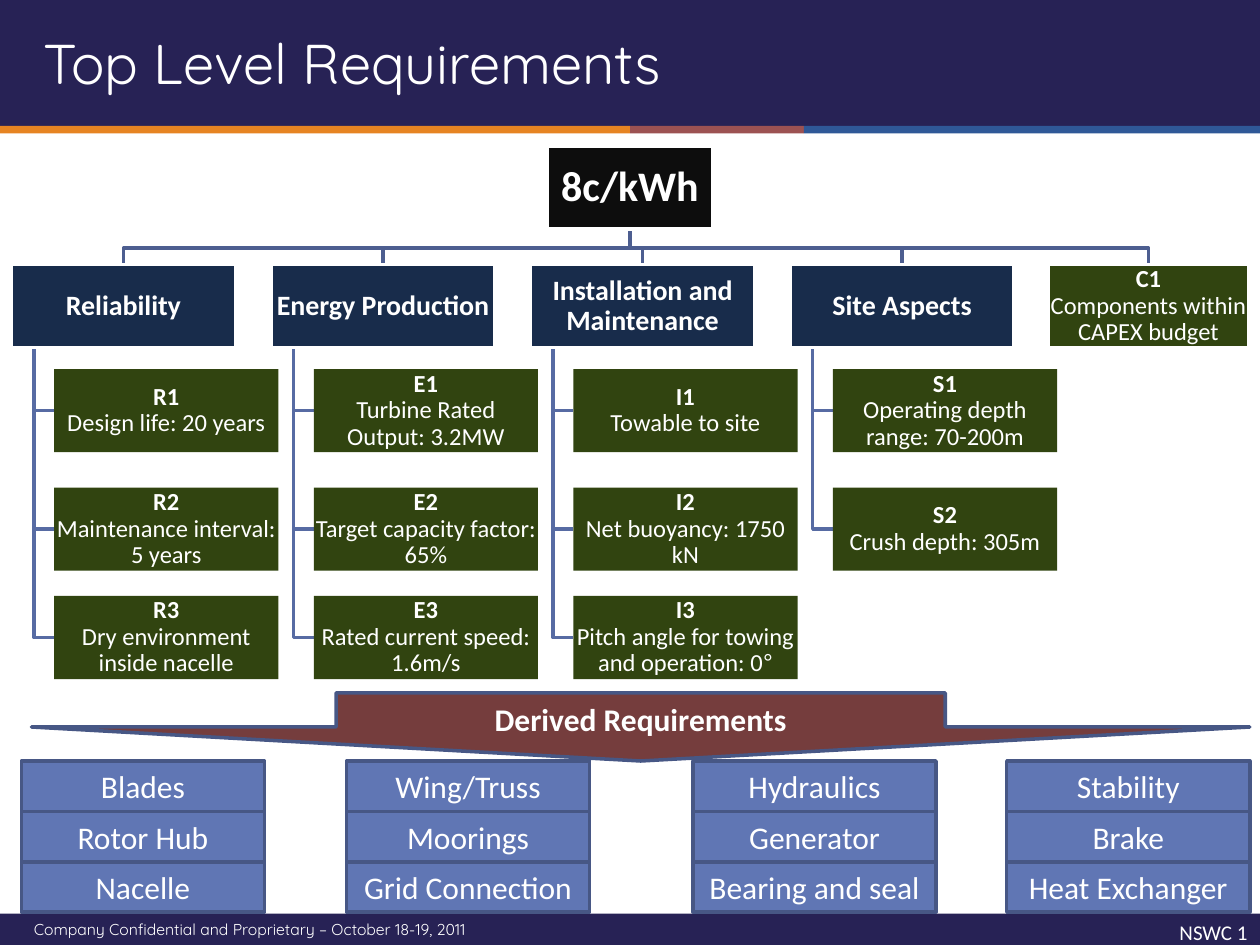
"""Build the Top Level Requirements slide."""
import pptx
import pptx.util
import pptx.dml.color
import pptx.enum.shapes
import pptx.enum.text

Inches = pptx.util.Inches
Pt = pptx.util.Pt
RGB = pptx.dml.color.RGBColor
SHAPE = pptx.enum.shapes.MSO_SHAPE
ALIGN = pptx.enum.text.PP_ALIGN
ANCHOR = pptx.enum.text.MSO_ANCHOR

WHITE = RGB(0xFF, 0xFF, 0xFF)
BLACK = RGB(0x0D, 0x0D, 0x0D)
INDIGO = RGB(0x27, 0x22, 0x55)
ORANGE = RGB(0xE6, 0x84, 0x22)
RED = RGB(0x9C, 0x52, 0x52)
BLUE = RGB(0x2F, 0x58, 0x97)
NAVY = RGB(0x18, 0x2C, 0x4B)
GREEN = RGB(0x31, 0x44, 0x10)
MAROON = RGB(0x75, 0x3D, 0x3D)
PERI = RGB(0x60, 0x76, 0xB4)
EDGE = RGB(0x47, 0x57, 0x85)
TRUNK = RGB(0x4D, 0x5E, 0x90)
TWIG = RGB(0x57, 0x6B, 0xA3)

TITLE = "Top Level Requirements"
FOOTER = "Company Confidential and Proprietary – October 18-19, 2011"
PAGE = "NSWC 1"
GOAL = "8c/kWh"
BUDGET = ("C1", "Components within CAPEX budget")
BRANCHES = [
    ("Reliability", [
        ("R1", "Design life: 20 years"),
        ("R2", "Maintenance interval: 5 years"),
        ("R3", "Dry environment inside nacelle")]),
    ("Energy Production", [
        ("E1", "Turbine Rated Output: 3.2MW"),
        ("E2", "Target capacity factor: 65%"),
        ("E3", "Rated current speed: 1.6m/s")]),
    ("Installation and Maintenance", [
        ("I1", "Towable to site"),
        ("I2", "Net buoyancy: 1750 kN"),
        ("I3", "Pitch angle for towing and operation: 0°")]),
    ("Site Aspects", [
        ("S1", "Operating depth range: 70-200m"),
        ("S2", "Crush depth: 305m")]),
]
DERIVED = "Derived Requirements"
PARTS = [
    (0.17, ["Blades", "Rotor Hub", "Nacelle"]),
    (2.75, ["Wing/Truss", "Moorings", "Grid Connection"]),
    (5.5, ["Hydraulics", "Generator", "Bearing and seal"]),
    (7.99, ["Stability", "Brake", "Heat Exchanger"]),
]
STRIPES = [(0, 5, ORANGE), (5, 1.38, RED), (6.38, 3.62, BLUE)]

LEFT, PITCH, WIDE, HIGH = 0.09, 2.06, 1.78, 0.66
HEAD, ROWS = 2.1, (2.93, 3.87, 4.73)
MID, FORK = 5, 1.97

deck = pptx.Presentation()
deck.slide_width, deck.slide_height = Inches(10), Inches(7.5)
slide = deck.slides.add_slide(deck.slide_layouts[6])


def write(shape, lines, size, font="Calibri", align=ALIGN.CENTER, space=None,
          inset=None, anchor=ANCHOR.MIDDLE):
    """Fill a shape with (text, bold) lines."""
    frame = shape.text_frame
    frame.word_wrap = True
    frame.vertical_anchor = anchor
    if inset is not None:
        frame.margin_left = frame.margin_right = Inches(inset)
        frame.margin_top = frame.margin_bottom = Inches(inset)
    for i, (text, bold) in enumerate(lines):
        para = frame.paragraphs[0] if i == 0 else frame.add_paragraph()
        para.alignment = align
        if space:
            para.line_spacing = space
        para.font.name, para.font.size = font, Pt(size)
        para.font.bold = bold
        para.font.color.rgb = WHITE
        body, sign, _ = text.partition("°")
        para.add_run().text = body
        if sign:
            run = para.add_run()
            run.text = sign
            run.font.name = "Arial"


def box(x, y, w, h, fill, line=None, kind=SHAPE.RECTANGLE):
    """Add a flat filled shape."""
    shape = slide.shapes.add_shape(kind, Inches(x), Inches(y), Inches(w), Inches(h))
    shape.shadow.inherit = False
    shape.fill.solid()
    shape.fill.fore_color.rgb = fill
    if line is None:
        shape.line.fill.background()
    else:
        shape.line.color.rgb = line
        shape.line.width = Pt(2)
    return shape


def label(x, y, w, h, text, size, **style):
    """Add a one-line text box."""
    area = slide.shapes.add_textbox(Inches(x), Inches(y), Inches(w), Inches(h))
    write(area, [(text, False)], size, **style)


def elbow(points, color):
    """Draw an open bent line through the points."""
    spots = [(Inches(x), Inches(y)) for x, y in points]
    path = slide.shapes.build_freeform(*spots[0])
    path.add_line_segments(spots[1:], close=False)
    shape = path.convert_to_shape()
    shape.shadow.inherit = False
    shape.fill.background()
    shape.line.color.rgb = color
    shape.line.width = Pt(2)


def need(x, y, w, pair, line=None):
    """Add a coded requirement box."""
    code, text = pair
    write(box(x, y, w, HIGH, GREEN, line), [(code, True), (text, False)], 14,
          space=0.9, inset=0.01)


def tree():
    """Draw the goal, its branches and their requirements."""
    spots = [(LEFT + i * PITCH, WIDE) for i in range(len(BRANCHES))]
    last = (8.32, 1.59)
    for x, w in spots + [last]:
        stem = x + w / 2
        elbow([(MID, 1.83), (MID, FORK), (stem, FORK), (stem, HEAD)], TRUNK)
    write(box(4.34, 1.16, 1.32, HIGH, BLACK, WHITE), [(GOAL, True)], 24,
          space=0.9, inset=0.02)
    for (x, w), (name, needs) in zip(spots, BRANCHES):
        stem, leaf = x + 0.18, x + 0.34
        for y, _ in zip(ROWS, needs):
            elbow([(stem, HEAD + HIGH), (stem, y + HIGH / 2), (leaf, y + HIGH / 2)], TWIG)
        write(box(x, HEAD, w, HIGH, NAVY, WHITE), [(name, True)], 16,
              space=0.9, inset=0.01)
        for y, pair in zip(ROWS, needs):
            need(leaf, y, WIDE, pair)
    need(last[0], HEAD, last[1], BUDGET, WHITE)


def main():
    """Assemble and save the slide."""
    box(0, 7.25, 10, 0.25, INDIGO)
    box(0, 0, 10, 1, INDIGO)
    for x, w, color in STRIPES:
        box(x, 1, w, 0.06, color)
    label(0.17, 7.25, 4.42, 0.25, FOOTER, 9, font="Quicksand",
          align=ALIGN.LEFT, anchor=ANCHOR.TOP)
    label(0.25, 0.08, 9.25, 0.83, TITLE, 32, font="Quicksand", align=ALIGN.LEFT)
    tree()
    arrow = box(0.25, 5.5, 9.67, 0.54, MAROON, EDGE, SHAPE.DOWN_ARROW)
    write(arrow, [(DERIVED, True)], 18)
    for x, names in PARTS:
        for i, name in enumerate(names):
            write(box(x, 6.04 + i * 0.4, 1.93, 0.4, PERI, EDGE), [(name, False)], 18)
    label(7.67, 7.25, 2.33, 0.42, PAGE, 12, align=ALIGN.RIGHT, anchor=ANCHOR.TOP)
    deck.save("out.pptx")


if __name__ == "__main__":
    main()
